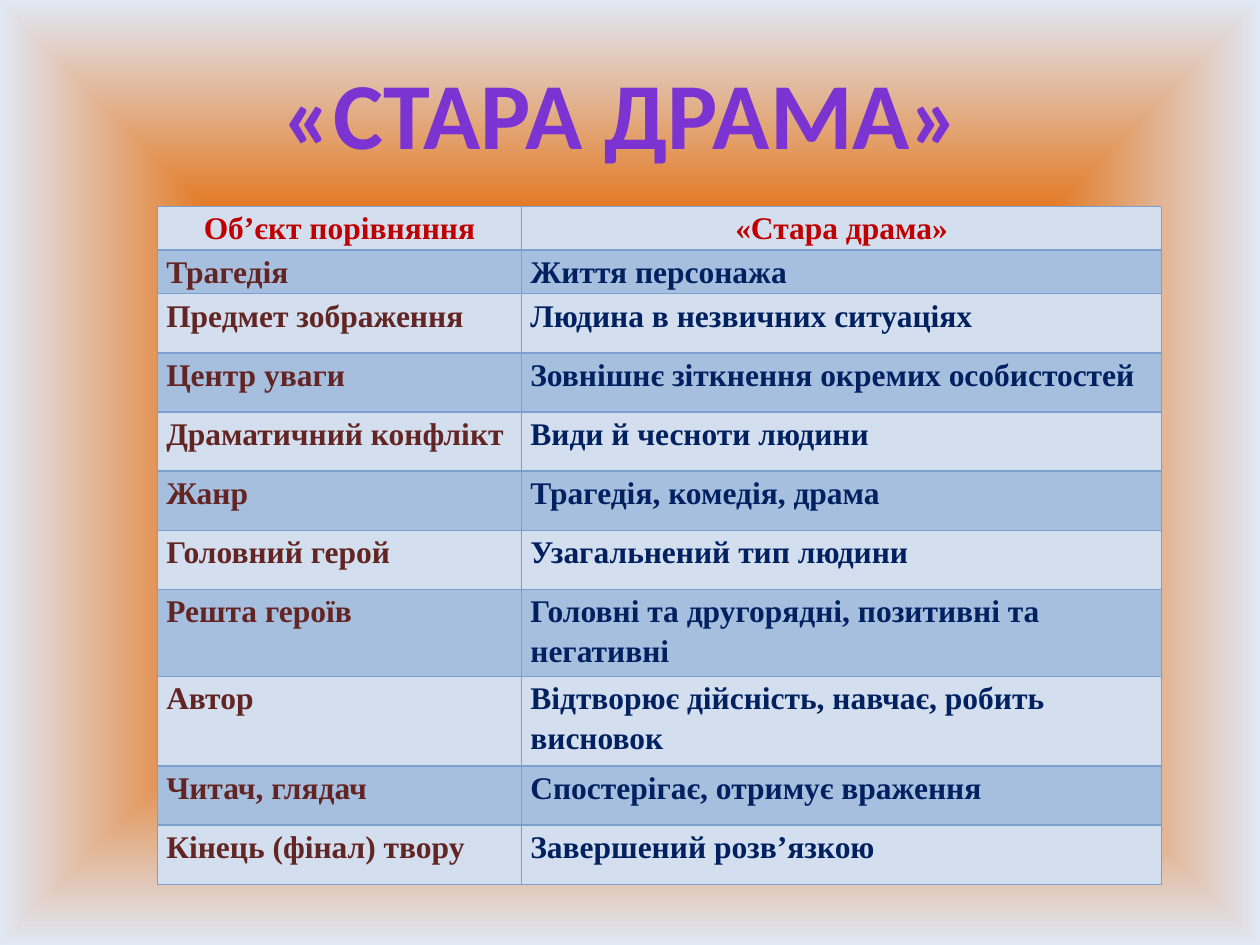
"""Build the comparison slide about the traits of the old drama."""
from dataclasses import dataclass

from lxml import etree
from pptx import Presentation
from pptx.dml.color import RGBColor
from pptx.enum import text
from pptx.oxml import ns
from pptx.slide import Slide
from pptx.table import _Cell
from pptx.util import Inches, Pt


@dataclass(frozen=True)
class Theme:
    title: str = "7B34D2"
    heading: str = "C00000"
    subject: str = "632523"
    trait: str = "002060"
    border: str = "7BA0CD"
    bands: tuple[str, str] = ("D3DFEE", "A7BFDE")
    backdrop: tuple[str, str, str] = ("9AB5E4", "E46C0A", "E1E8F5")
    title_font: str = "Calibri"
    table_font: str = "Times New Roman"
    title_size: int = 54
    table_size: int = 18


@dataclass(frozen=True)
class Comparison:
    subject: str
    trait: str
    height: float = 0.47


THEME = Theme()
COLUMN_WIDTHS = (2.89, 5.08)
COMPARISONS = (
    Comparison("Об’єкт порівняння", "«Стара драма»", 0.34),
    Comparison("Трагедія", "Життя персонажа", 0.24),
    Comparison("Предмет зображення", "Людина в незвичних ситуаціях"),
    Comparison("Центр уваги", "Зовнішнє зіткнення окремих особистостей"),
    Comparison("Драматичний конфлікт", "Види й чесноти людини"),
    Comparison("Жанр", "Трагедія, комедія, драма"),
    Comparison("Головний герой", "Узагальнений тип людини"),
    Comparison("Решта героїв", "Головні та другорядні, позитивні та негативні"),
    Comparison("Автор", "Відтворює дійсність, навчає, робить висновок", 0.71),
    Comparison("Читач, глядач", "Спостерігає, отримує враження"),
    Comparison("Кінець (фінал) твору", "Завершений розв’язкою"),
)


def apply(target: object, formats: dict[str, object]) -> None:
    """Set every named format value on the target."""
    for name, value in formats.items():
        setattr(target, name, value)


def add_element(parent: etree._Element, tag: str, **attributes: str) -> etree._Element:
    """Append a drawing element to its parent."""
    return etree.SubElement(parent, ns.qn(tag), attributes)


def paint_backdrop(slide: Slide) -> None:
    """Fill the background with a rectangular gradient."""
    slide.background.fill.gradient()
    gradient = slide.element.xpath(".//p:bg//a:gradFill")[0]
    for child in list(gradient):
        gradient.remove(child)
    stops = add_element(gradient, "a:gsLst")
    for index, color in enumerate(THEME.backdrop):
        stop = add_element(stops, "a:gs", pos=str(index * 50000))
        add_element(stop, "a:srgbClr", val=color)
    shade = add_element(gradient, "a:path", path="rect")
    add_element(shade, "a:fillToRect", **dict.fromkeys("ltrb", "50000"))


def write_title(slide: Slide, wording: str) -> None:
    """Place and format the slide title."""
    title = slide.shapes.title
    apply(title, {"left": Inches(2.11), "top": Inches(0.39),
                  "width": Inches(5.65), "height": Inches(1.01)})
    frame = title.text_frame
    frame.text = wording
    apply(frame, {"word_wrap": False, "vertical_anchor": text.MSO_ANCHOR.TOP,
                  "auto_size": text.MSO_AUTO_SIZE.SHAPE_TO_FIT_TEXT})
    heading = frame.paragraphs[0]
    heading.alignment = text.PP_ALIGN.CENTER
    font = heading.runs[0].font
    apply(font, {"name": THEME.title_font, "size": Pt(THEME.title_size), "bold": True})
    font.color.rgb = RGBColor.from_string(THEME.title)


def draw_borders(cell: _Cell) -> None:
    """Outline all four sides of a cell."""
    properties = cell._tc.get_or_add_tcPr()
    for side in ("a:lnL", "a:lnR", "a:lnT", "a:lnB"):
        line = add_element(properties, side, w=str(Pt(1)))
        add_element(add_element(line, "a:solidFill"), "a:srgbClr", val=THEME.border)


def write_cell(cell: _Cell, wording: str, color: str, band: str,
               alignment: text.PP_ALIGN) -> None:
    """Fill one table cell with formatted wording."""
    draw_borders(cell)
    cell.fill.solid()
    cell.fill.fore_color.rgb = RGBColor.from_string(band)
    apply(cell, {"margin_left": Inches(0.07), "margin_right": Inches(0.07),
                 "margin_top": 0, "margin_bottom": 0})
    cell.text = wording
    entry = cell.text_frame.paragraphs[0]
    apply(entry, {"alignment": alignment, "line_spacing": 1.15, "space_after": Pt(10)})
    font = entry.runs[0].font
    apply(font, {"name": THEME.table_font, "size": Pt(THEME.table_size), "bold": True})
    font.color.rgb = RGBColor.from_string(color)


def draw_comparisons(slide: Slide) -> None:
    """Draw the comparison table."""
    height = sum(comparison.height for comparison in COMPARISONS)
    table = slide.shapes.add_table(
        len(COMPARISONS), len(COLUMN_WIDTHS), Inches(1.25), Inches(1.64),
        Inches(sum(COLUMN_WIDTHS)), Inches(height)).table
    apply(table, {"first_row": False, "horz_banding": False})
    for column, width in zip(table.columns, COLUMN_WIDTHS):
        column.width = Inches(width)
    for index, comparison in enumerate(COMPARISONS):
        row = table.rows[index]
        row.height = Inches(comparison.height)
        colors = (THEME.subject, THEME.trait) if index else (THEME.heading,) * 2
        alignment = text.PP_ALIGN.LEFT if index else text.PP_ALIGN.CENTER
        wordings = (comparison.subject, comparison.trait)
        for cell, wording, color in zip(row.cells, wordings, colors):
            write_cell(cell, wording, color, THEME.bands[index % 2], alignment)


def main() -> None:
    """Build and save the presentation."""
    presentation = Presentation()
    apply(presentation, {"slide_width": Inches(10), "slide_height": Inches(7.5)})
    slide = presentation.slides.add_slide(presentation.slide_layouts[5])
    paint_backdrop(slide)
    write_title(slide, "«СТАРА ДРАМА»")
    draw_comparisons(slide)
    presentation.save("out.pptx")


if __name__ == "__main__":
    main()
